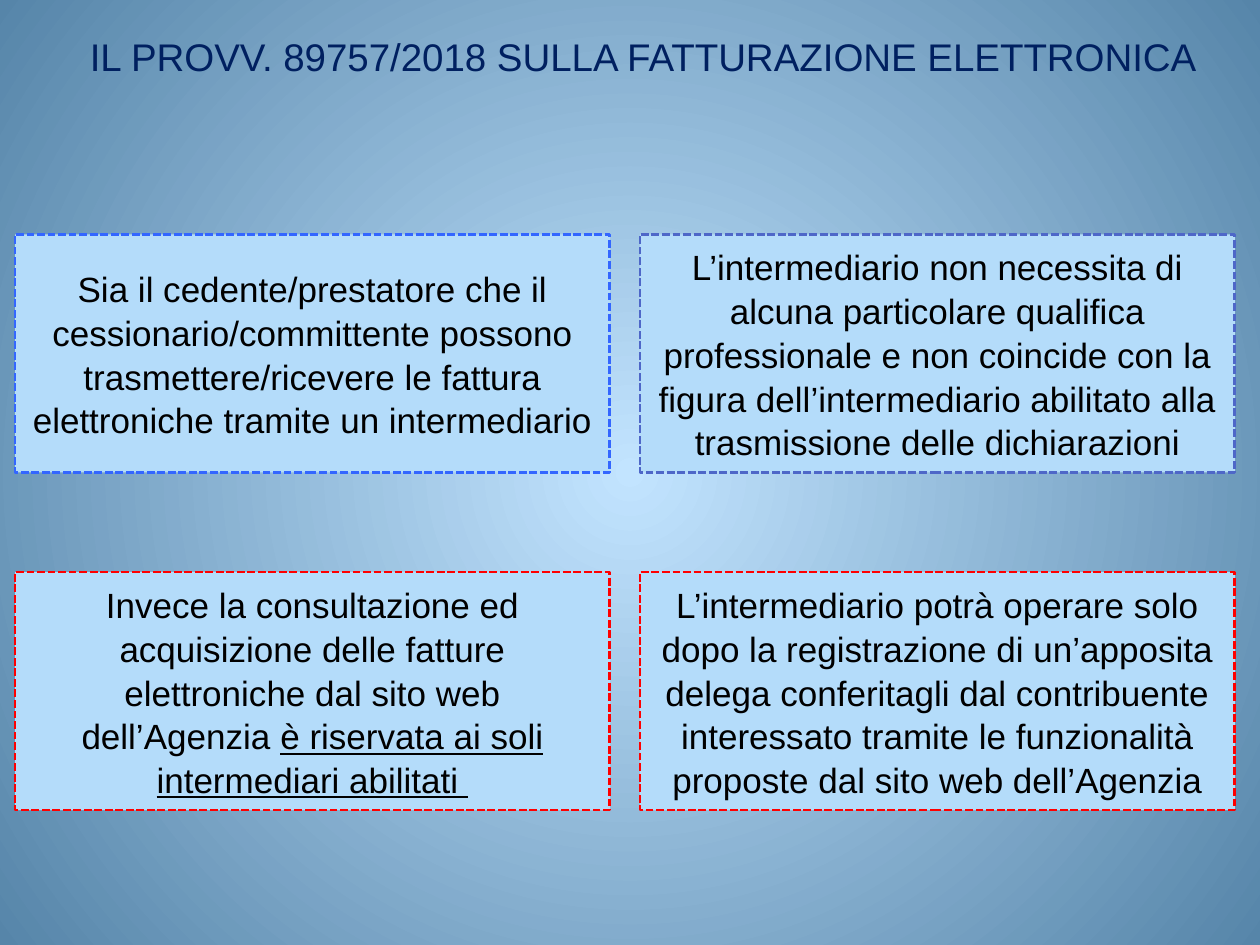
from lxml.etree import SubElement
from pptx import Presentation
from pptx.dml.color import RGBColor
from pptx.enum.dml import MSO_LINE
from pptx.enum.shapes import MSO_SHAPE
from pptx.enum.text import MSO_ANCHOR, MSO_AUTO_SIZE, PP_ALIGN
from pptx.oxml.ns import qn
from pptx.util import Inches, Pt

COLORS = {
    "center": "C2E4FF",
    "edge": "5685A9",
    "box": "B4DCFA",
    "blue": "3366FF",
    "indigo": "4E67C8",
    "red": "FF0000",
    "text": "000000",
    "title": "002060",
}


def color(name):
    return RGBColor.from_string(COLORS[name])


def add_span(para, text, size, color_name, underline=None):
    span = para.add_run()
    span.text = text
    font_format = {"name": "Arial", "size": Pt(size), "underline": underline}
    for attribute, value in font_format.items():
        setattr(span.font, attribute, value)
    span.font.color.rgb = color(color_name)


deck = Presentation()
deck.slide_width, deck.slide_height = Inches(10), Inches(7.5)
page = deck.slides.add_slide(deck.slide_layouts[5])

# Radial background, light in the centre
background = page.background.fill
background.gradient()
for stop, name, position in zip(background.gradient_stops, ("center", "edge"), (0, 1)):
    stop.color.rgb = color(name)
    stop.position = position
linear = page.element.find(".//" + qn("a:lin"))
gradient = linear.getparent()
gradient.remove(linear)
radial = SubElement(gradient, qn("a:path"), path="circle")
SubElement(radial, qn("a:fillToRect"), l="50000", t="50000", r="50000", b="50000")

# Four statements in a two by two grid: line colour, then (text, underline) spans
statements = [
    ("blue", [("Sia il cedente/prestatore che il cessionario/committente possono "
               "trasmettere/ricevere le fattura elettroniche tramite un intermediario", None)]),
    ("indigo", [("L’intermediario non necessita di alcuna particolare qualifica professionale "
                 "e non coincide con la figura dell’intermediario abilitato alla trasmissione "
                 "delle dichiarazioni", None)]),
    ("red", [("Invece la consultazione ed acquisizione delle fatture elettroniche dal sito web "
              "dell’Agenzia ", None),
             ("è riservata ai soli intermediari abilitati ", True)]),
    ("red", [("L’intermediario potrà operare solo dopo la registrazione di un’apposita delega "
              "conferitagli dal contribuente interessato tramite le funzionalità proposte dal "
              "sito web dell’Agenzia", None)]),
]
for index, (line_color, spans) in enumerate(statements):
    row, column = divmod(index, 2)
    box = page.shapes.add_shape(
        MSO_SHAPE.RECTANGLE,
        Inches(0.12 + 4.96 * column), Inches(1.86 + 2.68 * row),
        Inches(4.72), Inches(1.89),
    )
    box.shadow.inherit = False
    box.fill.solid()
    box.fill.fore_color.rgb = color("box")
    box.line.color.rgb = color(line_color)
    box.line.width = Pt(1.5)
    box.line.dash_style = MSO_LINE.SQUARE_DOT
    box.text_frame.word_wrap = True
    box.text_frame.vertical_anchor = MSO_ANCHOR.MIDDLE
    para = box.text_frame.paragraphs[0]
    para.alignment = PP_ALIGN.CENTER
    para.line_spacing = Pt(25)
    for text, underline in spans:
        add_span(para, text, 20, "text", underline)

title = page.shapes.title
title_place = {"left": 0.28, "top": 0.21, "width": 9.72, "height": 0.47}
for attribute, value in title_place.items():
    setattr(title, attribute, Inches(value))
title_format = {
    "word_wrap": True,
    "auto_size": MSO_AUTO_SIZE.NONE,
    "vertical_anchor": MSO_ANCHOR.MIDDLE,
}
for attribute, value in title_format.items():
    setattr(title.text_frame, attribute, value)
para = title.text_frame.paragraphs[0]
para.alignment = PP_ALIGN.CENTER
para.space_before = Pt(4.4)
add_span(para, "IL PROVV. 89757/2018 SULLA FATTURAZIONE ELETTRONICA ", 22, "title")

deck.save("out.pptx")
